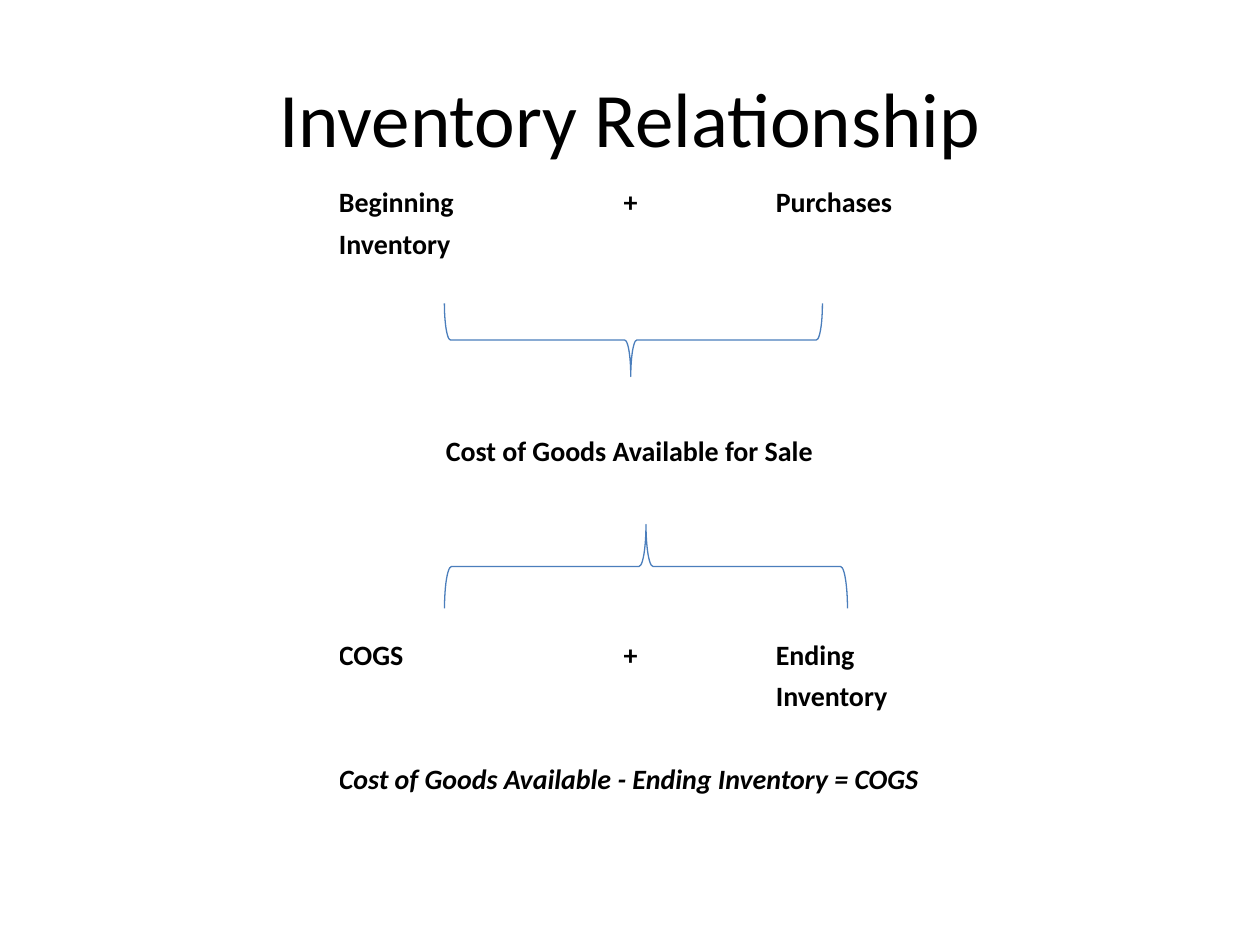
from pptx import Presentation
from pptx import util as u
from pptx.dml.color import RGBColor
from pptx.enum import shapes, text

PX = u.Inches(1) // 126
BLACK = RGBColor(0x00, 0x00, 0x00)
BLUE = RGBColor(0x4B, 0x7E, 0xBC)
LEFT, CENTER = text.PP_ALIGN.LEFT, text.PP_ALIGN.CENTER


def style(paragraph, size, align, bold=False, italic=False):
    paragraph.alignment = align
    font = paragraph.font
    font.name, font.size = "Calibri", u.Pt(size)
    font.bold, font.italic = bold, italic
    font.color.rgb = BLACK


presentation = Presentation()
presentation.slide_width = u.Inches(10)
presentation.slide_height = u.Inches(7.5)
slide = presentation.slides.add_slide(presentation.slide_layouts[6])

title = slide.shapes.add_textbox(63 * PX, 38 * PX, 1134 * PX, 158 * PX)
title.text_frame.word_wrap = True
title.text_frame.vertical_anchor = text.MSO_ANCHOR.MIDDLE
title.text_frame.text = "Inventory Relationship"
style(title.text_frame.paragraphs[0], 44, CENTER)

column_widths = [97, 146, 97, 97, 97, 144, 97]
row_heights = [41, 42] * 7 + [41]
row_heights[11] = 38
table = slide.shapes.add_table(
    len(row_heights), len(column_widths), 242 * PX, 179 * PX,
    sum(column_widths) * PX, sum(row_heights) * PX).table
table.first_row = table.horz_banding = False
for column, width in zip(table.columns, column_widths):
    column.width = width * PX
for row, height in zip(table.rows, row_heights):
    row.height = height * PX

entries = {
    (0, 1): ("Beginning", LEFT),
    (0, 3): ("+", CENTER),
    (0, 5): ("Purchases", LEFT),
    (1, 1): ("Inventory", LEFT),
    (6, 1): ("Cost of Goods Available for Sale", CENTER),
    (11, 1): ("COGS", LEFT),
    (11, 3): ("+", CENTER),
    (11, 5): ("Ending", LEFT),
    (12, 5): ("Inventory", LEFT),
    (14, 1): ("Cost of Goods Available - Ending Inventory = COGS", LEFT),
}
for row in range(len(row_heights)):
    for column in range(len(column_widths)):
        cell = table.cell(row, column)
        wording, align = entries.get((row, column), ("", LEFT))
        cell.text = wording
        cell.fill.background()
        cell.vertical_anchor = text.MSO_ANCHOR.BOTTOM
        cell.margin_left = cell.margin_right = 0
        cell.margin_top = cell.margin_bottom = 0
        style(cell.text_frame.paragraphs[0], 16, align, True, row == 14)

for first, last in [((0, 1), (0, 2)), ((2, 1), (5, 5)),
                    ((6, 1), (6, 5)), ((14, 1), (14, 6))]:
    table.cell(*first).merge(table.cell(*last))

for left, top, width, height, rotation, point in [
        (597, 151, 73, 378, 270, 0.493), (604, 365, 84, 403, 90, 0.5)]:
    brace = slide.shapes.add_shape(
        shapes.MSO_SHAPE.LEFT_BRACE, left * PX, top * PX, width * PX, height * PX)
    brace.rotation = rotation
    brace.adjustments[1] = point
    brace.shadow.inherit = False
    brace.fill.background()
    brace.line.color.rgb = BLUE
    brace.line.width = u.Pt(0.75)

presentation.save("out.pptx")
